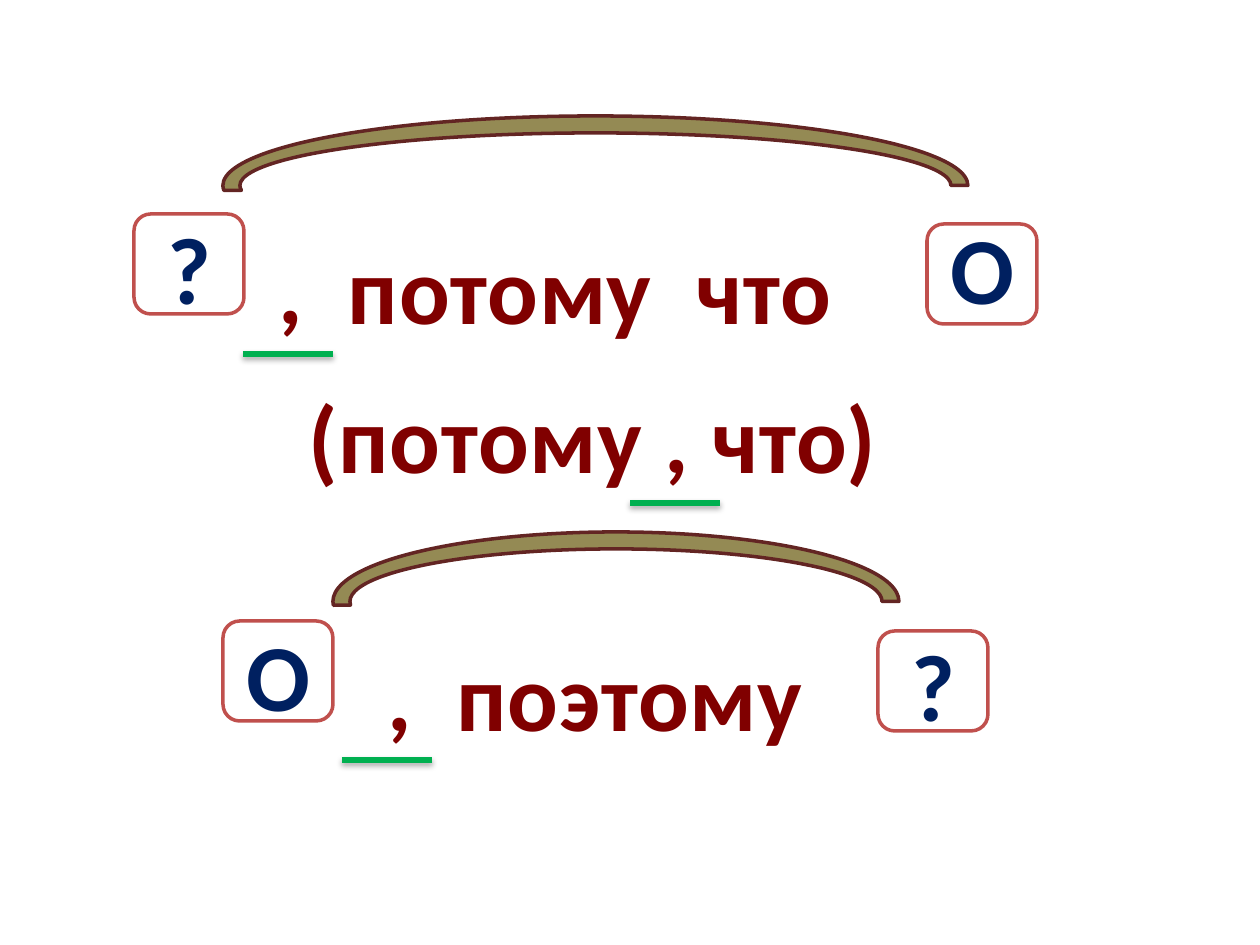
from lxml import etree
from pptx import Presentation
from pptx.dml.color import RGBColor
from pptx.enum.shapes import MSO_CONNECTOR, MSO_SHAPE
from pptx.enum.text import MSO_AUTO_SIZE, PP_ALIGN
from pptx.oxml.ns import qn
from pptx.util import Pt

ARC, BOX = MSO_SHAPE.BLOCK_ARC, MSO_SHAPE.ROUNDED_RECTANGLE
STRAIGHT = MSO_CONNECTOR.STRAIGHT
CENTER = PP_ALIGN.CENTER
FIT_SHAPE = MSO_AUTO_SIZE.SHAPE_TO_FIT_TEXT

EMU_PER_PX = 914400 / 126
COLORS = {"olive": "948A54", "brown": "632523", "white": "FFFFFF", "red": "C0504D",
          "navy": "002060", "maroon": "800000", "green": "00B050", "black": "000000"}
FONT = {"name": "Calibri", "size": Pt(54), "bold": True}
BOX_W, BOX_H = 110, 100
TEXT_H = 127
DASH_W = 90


def px(n):
    return round(n * EMU_PER_PX)


def rgb(name):
    return RGBColor.from_string(COLORS[name])


def add_outlined(s, kind, x, y, w, h, fill, line):
    sp = s.shapes.add_shape(kind, px(x), px(y), px(w), px(h))
    sp.shadow.inherit = False
    sp.fill.solid()
    sp.fill.fore_color.rgb = rgb(fill)
    sp.line.color.rgb = rgb(line)
    sp.line.width = Pt(2)
    return sp


def add_arc(s, x, y, w):
    sp = add_outlined(s, ARC, x, y, w, 139, "olive", "brown")
    for i, value in enumerate((107.535, 0, 0.122)):
        sp.adjustments[i] = value


def add_box(s, x, y):
    add_outlined(s, BOX, x, y, BOX_W, BOX_H, "white", "red")


def add_text(s, text, x, y, w, color):
    tf = s.shapes.add_textbox(px(x), px(y), px(w), px(TEXT_H)).text_frame
    tf.word_wrap = False
    tf.auto_size = FIT_SHAPE
    p = tf.paragraphs[0]
    p.alignment = CENTER
    r = p.add_run()
    r.text = text
    for name, value in FONT.items():
        setattr(r.font, name, value)
    r.font.color.rgb = rgb(color)
    r._r.get_or_add_rPr().set("spc", "50")


def add_dash(s, x, y):
    line = s.shapes.add_connector(STRAIGHT, px(x), px(y), px(x + DASH_W), px(y))
    line.line.color.rgb = rgb("green")
    line.line.width = Pt(3)
    # Soft shadow straight below the dash
    effects = etree.SubElement(line._element.spPr, qn("a:effectLst"))
    shadow = etree.SubElement(effects, qn("a:outerShdw"), blurRad="40000",
                              dist="23000", dir="5400000", rotWithShape="0")
    color = etree.SubElement(shadow, qn("a:srgbClr"), val=COLORS["black"])
    etree.SubElement(color, qn("a:alpha"), val="35000")


def main():
    prs = Presentation()
    prs.slide_width, prs.slide_height = px(1260), px(945)
    s = prs.slides.add_slide(prs.slide_layouts[6])

    # Arcs joining the two parts of each sentence
    add_arc(s, 223, 116, 745)
    add_arc(s, 333, 532, 566)

    # Boxes for question and statement
    for x, y in ((134, 214), (927, 224), (878, 631), (223, 621)):
        add_box(s, x, y)

    # Signs in the boxes
    for sign, x, y, w in (("?", 154, 204, 71), ("О", 937, 204, 91),
                          ("О", 233, 611, 91), ("?", 898, 621, 71)):
        add_text(s, sign, x, y, w, "navy")

    # Conjunctions
    for words, x, y, w in ((",  потому  что", 263, 224, 585),
                           ("(потому , что)", 292, 373, 601),
                           (",  поэтому", 372, 631, 446)):
        add_text(s, words, x, y, w, "maroon")

    # Dashes under the commas
    for x, y in ((342, 760), (630, 503), (243, 354)):
        add_dash(s, x, y)

    prs.save("out.pptx")


if __name__ == "__main__":
    main()
